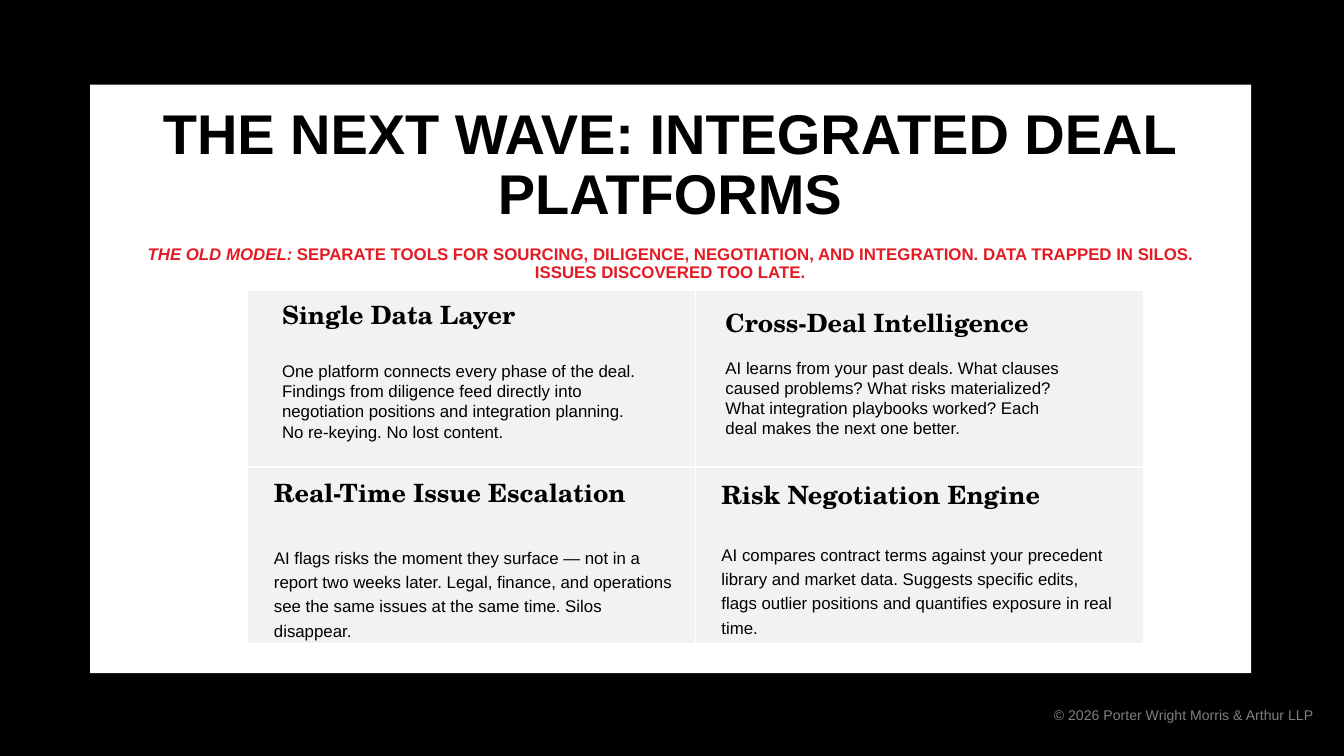
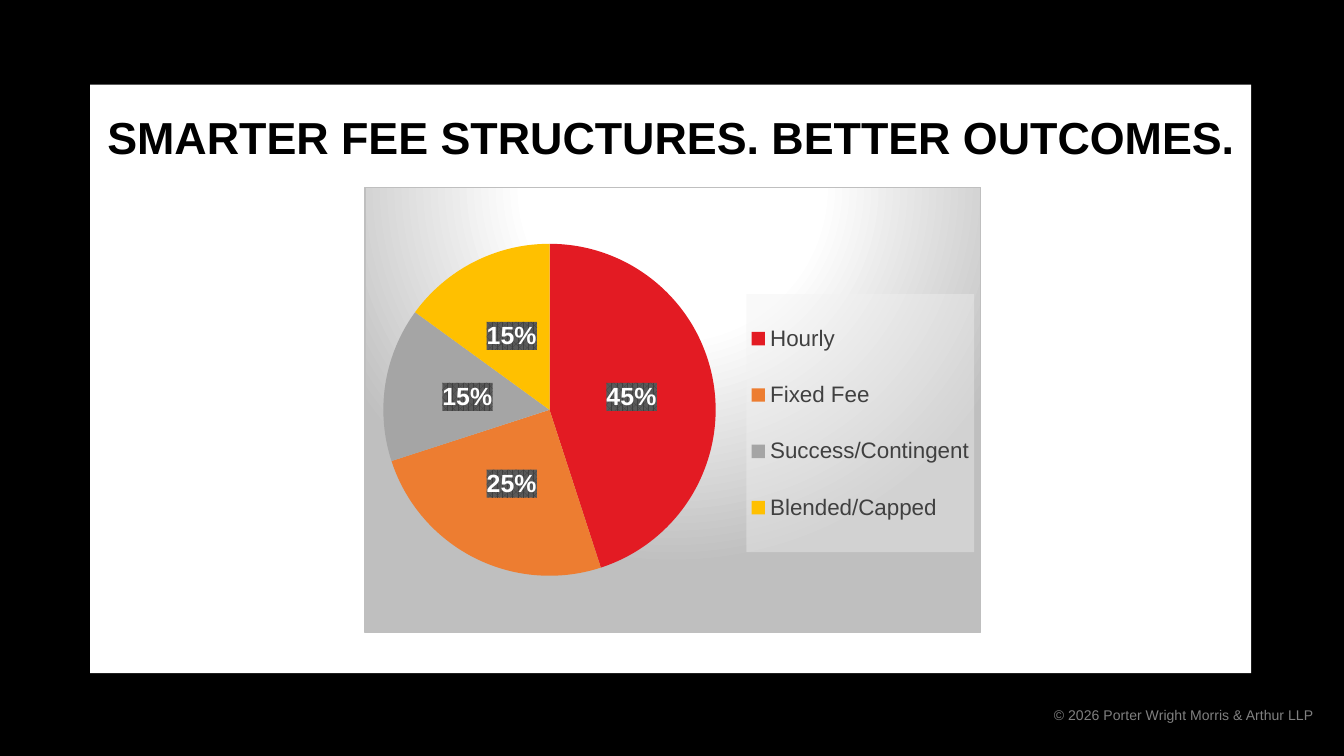
import pptx
import pptx.chart.data
import pptx.dml.color
import pptx.enum.chart
import pptx.enum.shapes
import pptx.enum.text
import pptx.oxml
import pptx.oxml.ns
import pptx.util

Inches = pptx.util.Inches
Align = pptx.enum.text.PP_ALIGN
COLORS = {
    "black": "000000",
    "white": "FFFFFF",
    "red": "E31B23",
    "orange": "ED7D31",
    "gray": "A5A5A5",
    "gold": "FFC000",
    "cell": "F2F2F2",
    "footer": "808080",
    "legend": "404040",
    "label": "595959",
    "frame": "BFBFBF",
}
SANS = "Arial"
SERIF = "TeX Gyre Schola"
NAMESPACES = pptx.oxml.ns.nsdecls("a", "c")


def style_font(font, size, color="black", name=SANS, bold=False, italic=False):
    values = {"size": pptx.util.Pt(size), "name": name, "bold": bold, "italic": italic}
    for attribute, value in values.items():
        setattr(font, attribute, value)
    font.color.rgb = pptx.dml.color.RGBColor.from_string(COLORS[color])


def add_text(page, place, paragraphs, anchor=pptx.enum.text.MSO_ANCHOR.TOP):
    box = page.shapes.add_textbox(*[Inches(length) for length in place])
    box.text_frame.word_wrap = True
    box.text_frame.vertical_anchor = anchor
    for index, (layout, spans) in enumerate(paragraphs):
        para = box.text_frame.paragraphs[0] if index == 0 else box.text_frame.add_paragraph()
        for attribute, value in layout.items():
            setattr(para, attribute, value)
        for text, style in spans:
            span = para.add_run()
            span.text = text
            style_font(span.font, **style)


deck = pptx.Presentation()
deck.slide_width = Inches(10)
deck.slide_height = deck.slide_width * 9 // 16

pages = []
for number in range(2):
    page = deck.slides.add_slide(deck.slide_layouts[6])
    panels = [
        ("black", (0, 0, deck.slide_width, deck.slide_height)),
        ("white", [Inches(length) for length in (0.67, 0.63, 8.64, 4.38)]),
    ]
    for color, place in panels:
        panel = page.shapes.add_shape(pptx.enum.shapes.MSO_SHAPE.RECTANGLE, *place)
        panel.shadow.inherit = False
        panel.fill.solid()
        panel.fill.fore_color.rgb = pptx.dml.color.RGBColor.from_string(COLORS[color])
        panel.line.fill.background()
    add_text(
        page,
        (6.49, 5.01, 3.38, 0.62),
        [({"alignment": Align.RIGHT},
          [("© 2026 Porter Wright Morris & Arthur LLP", {"size": 7.5, "color": "footer"})])],
        pptx.enum.text.MSO_ANCHOR.MIDDLE,
    )
    pages.append(page)
platform_page, fee_page = pages

grid = platform_page.shapes.add_table(
    2, 2, Inches(1.84), Inches(2.16), Inches(6.67), Inches(2.63)
).table
grid.first_row = False
grid.horz_banding = False
for cell in grid.iter_cells():
    properties = cell._tc.get_or_add_tcPr()
    for side in ("lnL", "lnR", "lnT", "lnB"):
        properties.append(pptx.oxml.parse_xml(
            f'<a:{side} {NAMESPACES} w="12700"><a:solidFill>'
            f'<a:srgbClr val="{COLORS["white"]}"/></a:solidFill></a:{side}>'
        ))
    cell.fill.solid()
    cell.fill.fore_color.rgb = pptx.dml.color.RGBColor.from_string(COLORS["cell"])

features = [
    ((2, 2.18, 2.91, 1.52), "Single Data Layer", 16.5, 1.0,
     "One platform connects every phase of the deal. Findings from diligence feed directly "
     "into negotiation positions and integration planning. No re-keying. No lost content."),
    ((5.3, 2.24, 2.7, 1.17), "Cross-Deal Intelligence", 10.5, 1.0,
     "AI learns from your past deals. What clauses caused problems? What risks materialized? "
     "What integration playbooks worked? Each deal makes the next one better."),
    ((1.94, 3.5, 3.24, 1.36), "Real-Time Issue Escalation", 19.5, 1.2,
     "AI flags risks the moment they surface — not in a report two weeks later. Legal, finance, "
     "and operations see the same issues at the same time. Silos disappear."),
    ((5.27, 3.52, 3.14, 1.27), "Risk Negotiation Engine", 16.5, 1.2,
     "AI compares contract terms against your precedent library and market data. Suggests "
     "specific edits, flags outlier positions and quantifies exposure in real time."),
]
for place, heading, gap, spacing, body in features:
    add_text(platform_page, place, [
        ({}, [(heading, {"size": 13.5, "name": SERIF, "bold": True})]),
        ({"space_before": pptx.util.Pt(gap), "line_spacing": spacing}, [(body, {"size": 9})]),
    ])

centered = {"alignment": Align.CENTER, "line_spacing": 0.9}
old_model = {"size": 9, "color": "red", "bold": True}
add_text(platform_page, (0.78, 0.74, 8.41, 1.18), [
    (centered, [("THE NEXT WAVE: INTEGRATED DEAL PLATFORMS", {"size": 30, "bold": True})]),
    (centered | {"space_before": pptx.util.Pt(10)}, [
        ("THE OLD MODEL: ", old_model | {"italic": True}),
        ("SEPARATE TOOLS FOR SOURCING, DILIGENCE, NEGOTIATION, AND INTEGRATION. "
         "DATA TRAPPED IN SILOS. ISSUES DISCOVERED TOO LATE.", old_model),
    ]),
])

fees = pptx.chart.data.CategoryChartData()
fees.categories = ["Hourly", "Fixed Fee", "Success/Contingent", "Blended/Capped"]
fees.add_series("Series 1", (45, 25, 15, 15))
chart = fee_page.shapes.add_chart(
    pptx.enum.chart.XL_CHART_TYPE.PIE,
    Inches(2.71), Inches(1.39), Inches(4.59), Inches(3.32), fees,
).chart
chart.has_title = False
style_font(chart.font, 10)
chart.has_legend = True
chart.legend.position = pptx.enum.chart.XL_LEGEND_POSITION.RIGHT
chart.legend.include_in_layout = False
style_font(chart.legend.font, 12, "legend")

pie = chart.plots[0]
pie.vary_by_categories = True
for index, color in enumerate(("red", "orange", "gray", "gold")):
    fill = pie.series[0].points[index].format.fill
    fill.solid()
    fill.fore_color.rgb = pptx.dml.color.RGBColor.from_string(COLORS[color])

pie.has_data_labels = True
labels = pie.data_labels
label_values = {
    "show_percentage": True,
    "show_value": False,
    "number_format": "0%",
    "number_format_is_linked": False,
    "position": pptx.enum.chart.XL_LABEL_POSITION.CENTER,
}
for attribute, value in label_values.items():
    setattr(labels, attribute, value)
style_font(labels.font, 13.3, "white", bold=True)

root = chart.element
legend = root.xpath(".//c:legend")[0]
plot_area = root.xpath(".//c:plotArea")[0]
fills = [
    (root,
     '<a:gradFill><a:gsLst>'
     f'<a:gs pos="0"><a:srgbClr val="{COLORS["white"]}"/></a:gs>'
     f'<a:gs pos="39000"><a:srgbClr val="{COLORS["white"]}"/></a:gs>'
     f'<a:gs pos="100000"><a:srgbClr val="{COLORS["frame"]}"/></a:gs></a:gsLst>'
     '<a:path path="circle"><a:fillToRect l="50000" t="-80000" r="50000" b="180000"/></a:path>'
     f'</a:gradFill><a:ln w="9525"><a:solidFill><a:srgbClr val="{COLORS["frame"]}"/>'
     '</a:solidFill></a:ln>'),
    (legend,
     f'<a:solidFill><a:srgbClr val="{COLORS["cell"]}"><a:alpha val="39000"/></a:srgbClr>'
     '</a:solidFill>'),
    (root.xpath(".//c:pieChart/c:dLbls")[0],
     f'<a:pattFill prst="pct75"><a:fgClr><a:srgbClr val="{COLORS["legend"]}"/></a:fgClr>'
     f'<a:bgClr><a:srgbClr val="{COLORS["label"]}"/></a:bgClr></a:pattFill>'),
]
for owner, content in fills:
    owner.xpath("./c:txPr")[0].addprevious(
        pptx.oxml.parse_xml(f"<c:spPr {NAMESPACES}>{content}</c:spPr>")
    )

layouts = [
    (plot_area, 0, '<c:layoutTarget val="inner"/>', (0.03, 0.12, 0.54, 0.76)),
    (legend, 1, "", (0.62, 0.24, 0.37, 0.58)),
]
for owner, position, target, fractions in layouts:
    for layout in owner.xpath("./c:layout"):
        owner.remove(layout)
    measures = "".join(
        f'<c:{key} val="{value}"/>' for key, value in zip("xywh", fractions)
    )
    owner.insert(position, pptx.oxml.parse_xml(
        f'<c:layout {NAMESPACES}><c:manualLayout>{target}'
        f'<c:xMode val="edge"/><c:yMode val="edge"/>{measures}</c:manualLayout></c:layout>'
    ))

add_text(fee_page, (0.7, 0.77, 9.83, 0.62), [
    ({}, [("SMARTER FEE STRUCTURES. BETTER OUTCOMES.", {"size": 24, "bold": True})]),
])

deck.save("out.pptx")
